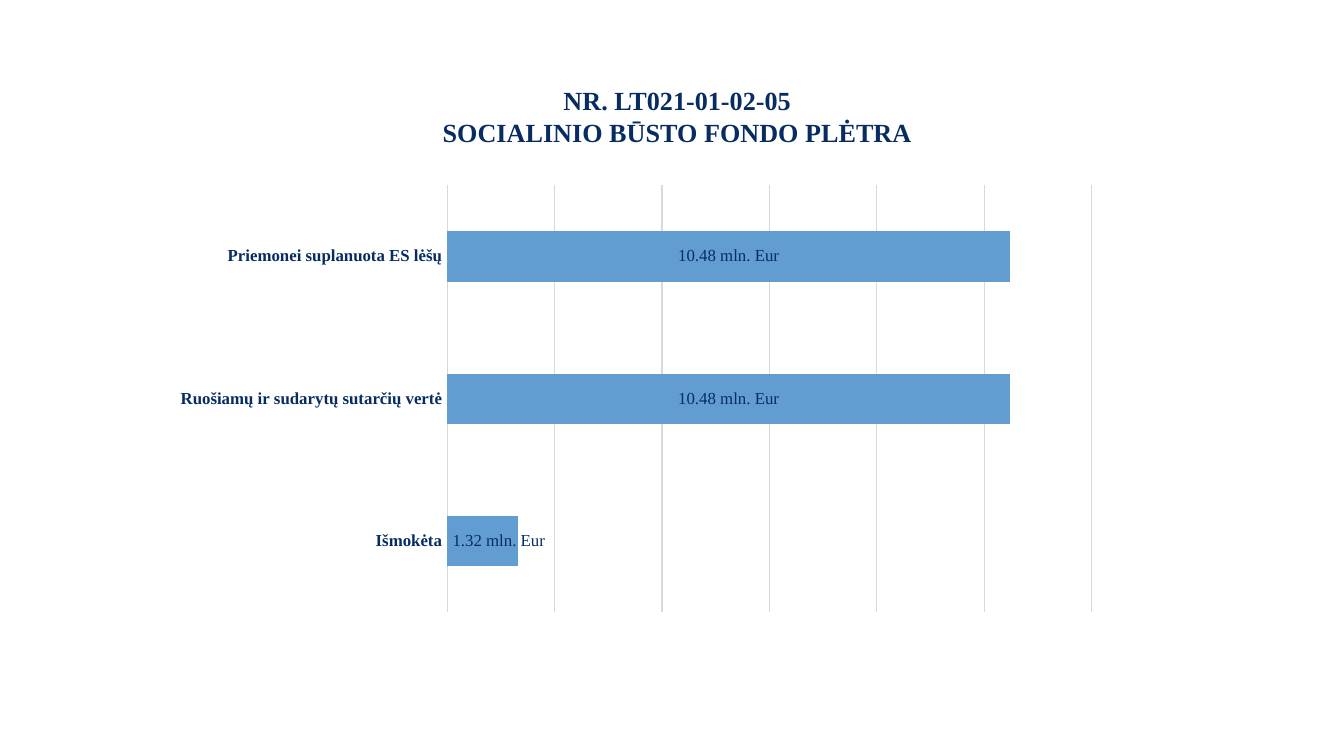
from pptx import Presentation
from pptx.chart.data import CategoryChartData
from pptx.dml.color import RGBColor
from pptx.enum.chart import XL_CHART_TYPE, XL_LABEL_POSITION, XL_TICK_MARK
from pptx.enum.text import MSO_ANCHOR, PP_ALIGN
from pptx.oxml import parse_xml
from pptx.oxml.ns import nsdecls, qn
from pptx.util import Cm, Pt

BAR = XL_CHART_TYPE.BAR_CLUSTERED
MID = XL_LABEL_POSITION.CENTER
BASE = XL_LABEL_POSITION.INSIDE_BASE
NO_TICK = XL_TICK_MARK.NONE
CENTER = PP_ALIGN.CENTER
MIDDLE = MSO_ANCHOR.MIDDLE

NAVY = RGBColor(0x07, 0x2C, 0x62)
BLUE = RGBColor(0x62, 0x9D, 0xD1)
GREY = RGBColor(0xD9, 0xD9, 0xD9)
SERIF = "Times New Roman"

TITLE = ["NR. LT021-01-02-05", "SOCIALINIO BŪSTO FONDO PLĖTRA"]
FUNDS = {
    "Išmokėta": 1.32,
    "Ruošiamų ir sudarytų sutarčių vertė": 10.48,
    "Priemonei suplanuota ES lėšų": 10.48,
}
SHORT = 2  # bars below this value are narrower than their label


def style(font, size, bold=False, color=NAVY, name=SERIF):
    font.size = Pt(size)
    font.bold = bold
    font.color.rgb = color
    font.name = name


def write(frame, lines, align=CENTER, wrap=True, **form):
    """Fill a text frame with one paragraph per line."""
    frame.text = "\n".join(lines)
    frame.word_wrap = wrap
    frame.vertical_anchor = MIDDLE
    for para in frame.paragraphs:
        para.alignment = align
        para.line_spacing = 1.0
        para.space_before = Pt(0)
        for run in para.runs:
            style(run.font, **form)


def rule(line):
    line.color.rgb = GREY
    line.width = Pt(0.75)


def set_plot(chart, x, y, w, h):
    """Fix the inner plot area, in fractions of the chart."""
    area = chart._chartSpace.chart.plotArea
    for old in area.findall(qn("c:layout")):
        area.remove(old)
    sizes = "".join(f'<c:{key} val="{val}"/>'
                    for key, val in zip("xywh", (x, y, w, h)))
    area.insert(0, parse_xml(
        f'<c:layout {nsdecls("c")}><c:manualLayout>'
        '<c:layoutTarget val="inner"/>'
        '<c:xMode val="edge"/><c:yMode val="edge"/>'
        f'{sizes}</c:manualLayout></c:layout>'))


def add_title(slide, box):
    title = slide.shapes.title
    title.left, title.top, title.width, title.height = box
    write(title.text_frame, TITLE, size=14, bold=True)


def add_labels(bars):
    """Label each bar; on a short bar the label starts at its base."""
    labels = bars.data_labels
    labels.show_value = True
    labels.number_format = '0.00" mln. Eur"'
    labels.number_format_is_linked = False
    labels.position = MID
    style(labels.font, 9)
    for i, val in enumerate(FUNDS.values()):
        if val < SHORT:
            label = bars.points[i].data_label
            write(label.text_frame, [f"{val:.2f} mln. Eur"],
                  wrap=False, size=9)
            label.position = BASE


def add_bars(slide, box):
    data = CategoryChartData(number_format="0.00")
    data.categories = list(FUNDS)
    data.add_series("Series 1", list(FUNDS.values()))
    chart = slide.shapes.add_chart(BAR, *box, data).chart
    chart.has_legend = False
    chart.has_title = False
    chart.font.size = Pt(10)
    chart.font.name = "League Spartan"
    set_plot(chart, 0.3, 0.02, 0.68, 0.96)

    cats = chart.category_axis
    cats.major_tick_mark = NO_TICK
    style(cats.tick_labels.font, 9, bold=True)
    rule(cats.format.line)

    vals = chart.value_axis
    vals.visible = False
    vals.minimum_scale, vals.maximum_scale, vals.major_unit = 0, 12, 2
    vals.has_major_gridlines = True
    rule(vals.major_gridlines.format.line)

    plot = chart.plots[0]
    plot.gap_width = 182
    plot.vary_by_categories = False
    bars = plot.series[0]
    bars.format.fill.solid()
    bars.format.fill.fore_color.rgb = BLUE
    add_labels(bars)


def main():
    deck = Presentation()
    deck.slide_width, deck.slide_height = Cm(25.4), Cm(14.28)
    slide = deck.slides.add_slide(deck.slide_layouts[5])
    add_title(slide, (Cm(3.48), Cm(1.47), Cm(18.64), Cm(1.45)))
    add_bars(slide, (Cm(3.08), Cm(3.33), Cm(17.91), Cm(8.41)))
    deck.save("out.pptx")


if __name__ == "__main__":
    main()
